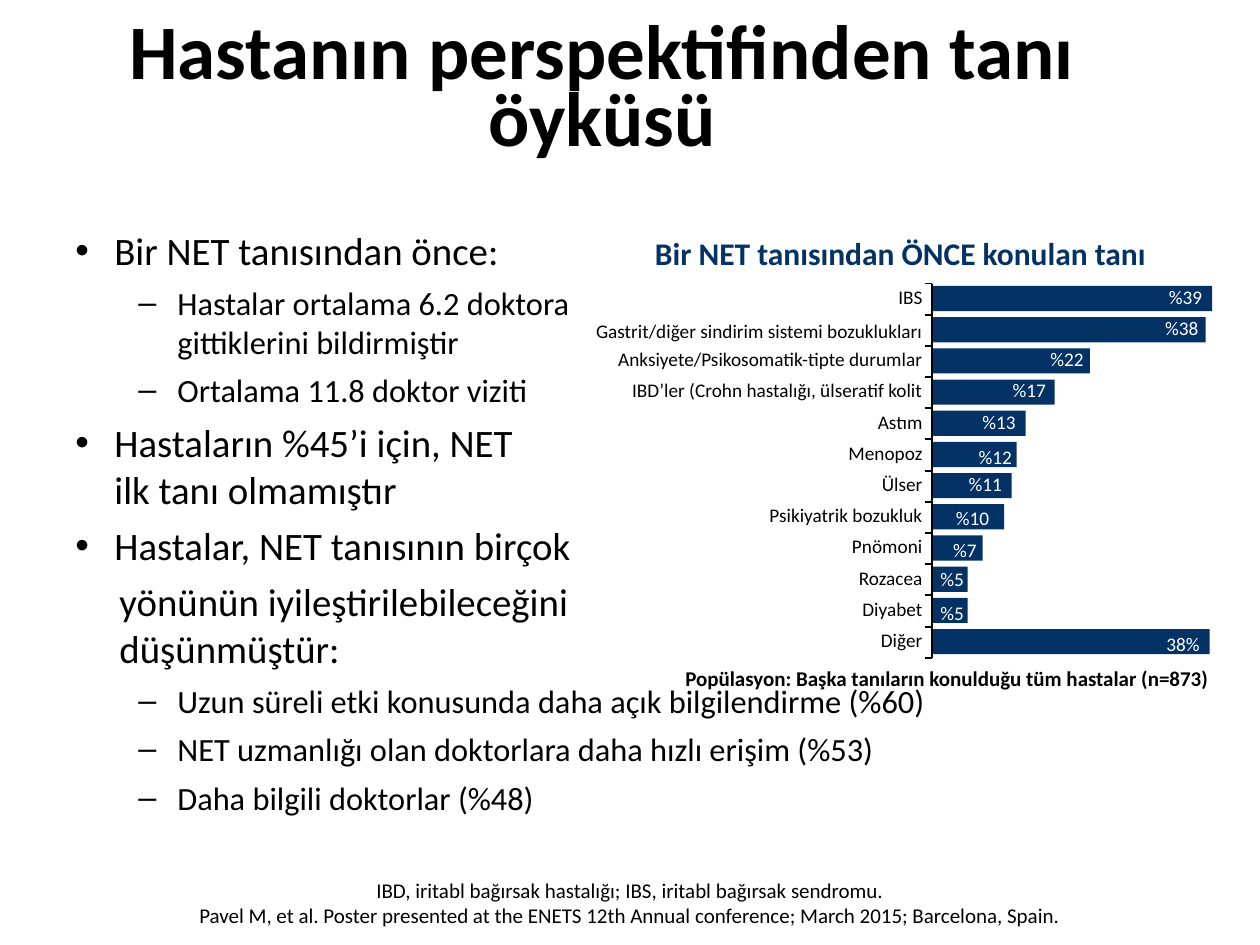
"""Build the slide on the patient's view of the diagnosis story."""
from dataclasses import dataclass

from lxml import etree
from pptx import Presentation
from pptx.dml.color import RGBColor
from pptx.enum.shapes import MSO_CONNECTOR, MSO_SHAPE
from pptx.enum.text import MSO_ANCHOR, PP_ALIGN
from pptx.oxml.ns import qn
from pptx.slide import Slide
from pptx.text.text import _Paragraph
from pptx.util import Inches, Pt

LEFT, CENTER, RIGHT = PP_ALIGN.LEFT, PP_ALIGN.CENTER, PP_ALIGN.RIGHT
TOP, MIDDLE = MSO_ANCHOR.TOP, MSO_ANCHOR.MIDDLE
RECTANGLE = MSO_SHAPE.RECTANGLE
STRAIGHT = MSO_CONNECTOR.STRAIGHT

BLACK = RGBColor(0x00, 0x00, 0x00)
WHITE = RGBColor(0xFF, 0xFF, 0xFF)
NAVY = RGBColor(0x04, 0x32, 0x65)
FONT_NAME = "Calibri"

AXIS_LEFT = 7.4
AXIS_TOP = 2.25
ROW_PITCH = 0.2475
BAR_HEIGHT = 0.2
TICK_LENGTH = 0.06
LABEL_RIGHT = 7.42
LABEL_WIDTH = 2.9
VALUE_WIDTH = 0.87
LABEL_HEIGHT = 0.19


@dataclass(frozen=True)
class TextStyle:
    size: float
    color: RGBColor = BLACK
    bold: bool = False
    align: PP_ALIGN = LEFT
    anchor: MSO_ANCHOR = TOP
    vertical_inset: float = 0.05


@dataclass(frozen=True)
class OutlineLevel:
    level: int
    size: float
    margin: float
    bullet: str = ""


@dataclass(frozen=True)
class Diagnosis:
    label: str
    value: str
    bar_width: float
    value_right: float
    value_drop: float = 0.0
    label_drop: float = 0.0


TITLE_STYLE = TextStyle(44, bold=True, align=CENTER, anchor=MIDDLE)
HEADING_STYLE = TextStyle(18, NAVY, bold=True)
POPULATION_STYLE = TextStyle(12, bold=True)
FOOTNOTE_STYLE = TextStyle(12, align=CENTER, anchor=MIDDLE)
LABEL_STYLE = TextStyle(11, align=RIGHT, anchor=MIDDLE, vertical_inset=0)
VALUE_STYLE = TextStyle(11, WHITE, align=RIGHT, anchor=MIDDLE, vertical_inset=0)

MAIN = OutlineLevel(0, 22.2, 0.31, "•")
CONTINUED = OutlineLevel(0, 22.2, 0.35)
DETAIL = OutlineLevel(1, 18.5, 0.81, "–")
HANGING_INDENT = 0.31

OUTLINE = [
    (MAIN, "Bir NET tanısından önce:"),
    (DETAIL, "Hastalar ortalama 6.2 doktora\ngittiklerini bildirmiştir"),
    (DETAIL, "Ortalama 11.8 doktor viziti"),
    (MAIN, "Hastaların %45’i için, NET\nilk tanı olmamıştır"),
    (MAIN, "Hastalar, NET tanısının birçok"),
    (CONTINUED, "yönünün iyileştirilebileceğini\ndüşünmüştür:"),
    (DETAIL, "Uzun süreli etki konusunda daha açık bilgilendirme (%60)"),
    (DETAIL, "NET uzmanlığı olan doktorlara daha hızlı erişim (%53)"),
    (DETAIL, "Daha bilgili doktorlar (%48)"),
]

DIAGNOSES = [
    Diagnosis("IBS", "%39", 2.22, 9.64),
    Diagnosis("Gastrit/diğer sindirim sistemi bozuklukları", "%38", 2.17, 9.61, label_drop=0.02),
    Diagnosis("Anksiyete/Psikosomatik-tipte durumlar", "%22", 1.25, 8.7),
    Diagnosis("IBD’ler (Crohn hastalığı, ülseratif kolit", "%17", 0.97, 8.4),
    Diagnosis("Astım", "%13", 0.74, 8.16),
    Diagnosis("Menopoz", "%12", 0.67, 8.13, 0.03),
    Diagnosis("Ülser", "%11", 0.63, 8.05),
    Diagnosis("Psikiyatrik bozukluk", "%10", 0.57, 7.95, 0.02),
    Diagnosis("Pnömoni", "%7", 0.4, 7.85, 0.03),
    Diagnosis("Rozacea", "%5", 0.28, 7.75, 0.01),
    Diagnosis("Diyabet", "%5", 0.28, 7.75, 0.03),
    Diagnosis("Diğer", "38%", 2.2, 9.62, 0.03),
]


def format_runs(paragraph: _Paragraph, style: TextStyle) -> None:
    for run in paragraph.runs:
        run.font.name = FONT_NAME
        run.font.size = Pt(style.size)
        run.font.bold = style.bold
        run.font.color.rgb = style.color


def add_text(slide: Slide, text: str, left: float, top: float,
             width: float, height: float, style: TextStyle):
    shape = slide.shapes.add_textbox(Inches(left), Inches(top), Inches(width), Inches(height))
    text_frame = shape.text_frame
    text_frame.word_wrap = True
    text_frame.vertical_anchor = style.anchor
    text_frame.margin_top = text_frame.margin_bottom = Inches(style.vertical_inset)
    text_frame.text = text
    for paragraph in text_frame.paragraphs:
        paragraph.alignment = style.align
        format_runs(paragraph, style)
    return text_frame


def set_indent(paragraph: _Paragraph, level: OutlineLevel) -> None:
    properties = paragraph._p.get_or_add_pPr()
    properties.set("marL", str(Inches(level.margin)))
    properties.set("indent", str(-Inches(HANGING_INDENT) if level.bullet else 0))
    if level.bullet:
        etree.SubElement(properties, qn("a:buFont")).set("typeface", "Arial")
        etree.SubElement(properties, qn("a:buChar")).set("char", level.bullet)


def add_outline(slide: Slide) -> None:
    shape = slide.shapes.add_textbox(Inches(0.5), Inches(1.75), Inches(9), Inches(5.23))
    text_frame = shape.text_frame
    text_frame.word_wrap = True
    for index, (level, text) in enumerate(OUTLINE):
        paragraph = text_frame.add_paragraph() if index else text_frame.paragraphs[0]
        paragraph.text = text
        paragraph.level = level.level
        set_indent(paragraph, level)
        paragraph.space_after = Pt(5.5)
        format_runs(paragraph, TextStyle(level.size))


def add_line(slide: Slide, left: float, top: float, right: float, bottom: float) -> None:
    connector = slide.shapes.add_connector(
        STRAIGHT, Inches(left), Inches(top), Inches(right), Inches(bottom))
    connector.line.color.rgb = BLACK
    connector.line.width = Pt(1.13)
    etree.SubElement(connector._element.spPr, qn("a:effectLst"))


def add_diagnosis(slide: Slide, diagnosis: Diagnosis, row_top: float) -> None:
    bar = slide.shapes.add_shape(
        RECTANGLE, Inches(AXIS_LEFT), Inches(row_top + 0.02),
        Inches(diagnosis.bar_width), Inches(BAR_HEIGHT))
    bar.shadow.inherit = False
    bar.fill.solid()
    bar.fill.fore_color.rgb = NAVY
    bar.line.fill.background()
    text_top = row_top + 0.01
    add_text(slide, diagnosis.label, LABEL_RIGHT - LABEL_WIDTH,
             text_top + diagnosis.label_drop, LABEL_WIDTH, LABEL_HEIGHT, LABEL_STYLE)
    add_text(slide, diagnosis.value, diagnosis.value_right - VALUE_WIDTH,
             text_top + diagnosis.value_drop, VALUE_WIDTH, LABEL_HEIGHT, VALUE_STYLE)


def add_diagnosis_bars(slide: Slide) -> None:
    for index, diagnosis in enumerate(DIAGNOSES):
        add_diagnosis(slide, diagnosis, AXIS_TOP + index * ROW_PITCH)
    axis_bottom = AXIS_TOP + len(DIAGNOSES) * ROW_PITCH
    add_line(slide, AXIS_LEFT, AXIS_TOP, AXIS_LEFT, axis_bottom)
    for index in range(len(DIAGNOSES) + 1):
        tick_top = AXIS_TOP + index * ROW_PITCH
        add_line(slide, AXIS_LEFT - TICK_LENGTH, tick_top, AXIS_LEFT, tick_top)


def main() -> None:
    presentation = Presentation()
    presentation.slide_width, presentation.slide_height = Inches(10), Inches(7.5)
    slide = presentation.slides.add_slide(presentation.slide_layouts[6])
    title = add_text(slide, "Hastanın perspektifinden tanı öyküsü", 0.28, 0.13, 9, 1.25, TITLE_STYLE)
    title.paragraphs[0].line_spacing = Pt(38)
    add_outline(slide)
    add_text(slide, "Popülasyon: Başka tanıların konulduğu tüm hastalar (n=873)",
             5.34, 5.23, 4.91, 0.39, POPULATION_STYLE)
    add_text(slide, "Bir NET tanısından ÖNCE konulan tanı", 5.1, 1.81, 4.9, 0.4, HEADING_STYLE)
    add_diagnosis_bars(slide)
    add_text(slide, "IBD, iritabl bağırsak hastalığı; IBS, iritabl bağırsak sendromu.\n"
             "Pavel M, et al. Poster presented at the ENETS 12th Annual conference; "
             "March 2015; Barcelona, Spain.", 0.51, 6.98, 8.98, 0.37, FOOTNOTE_STYLE)
    presentation.save("out.pptx")


if __name__ == "__main__":
    main()
